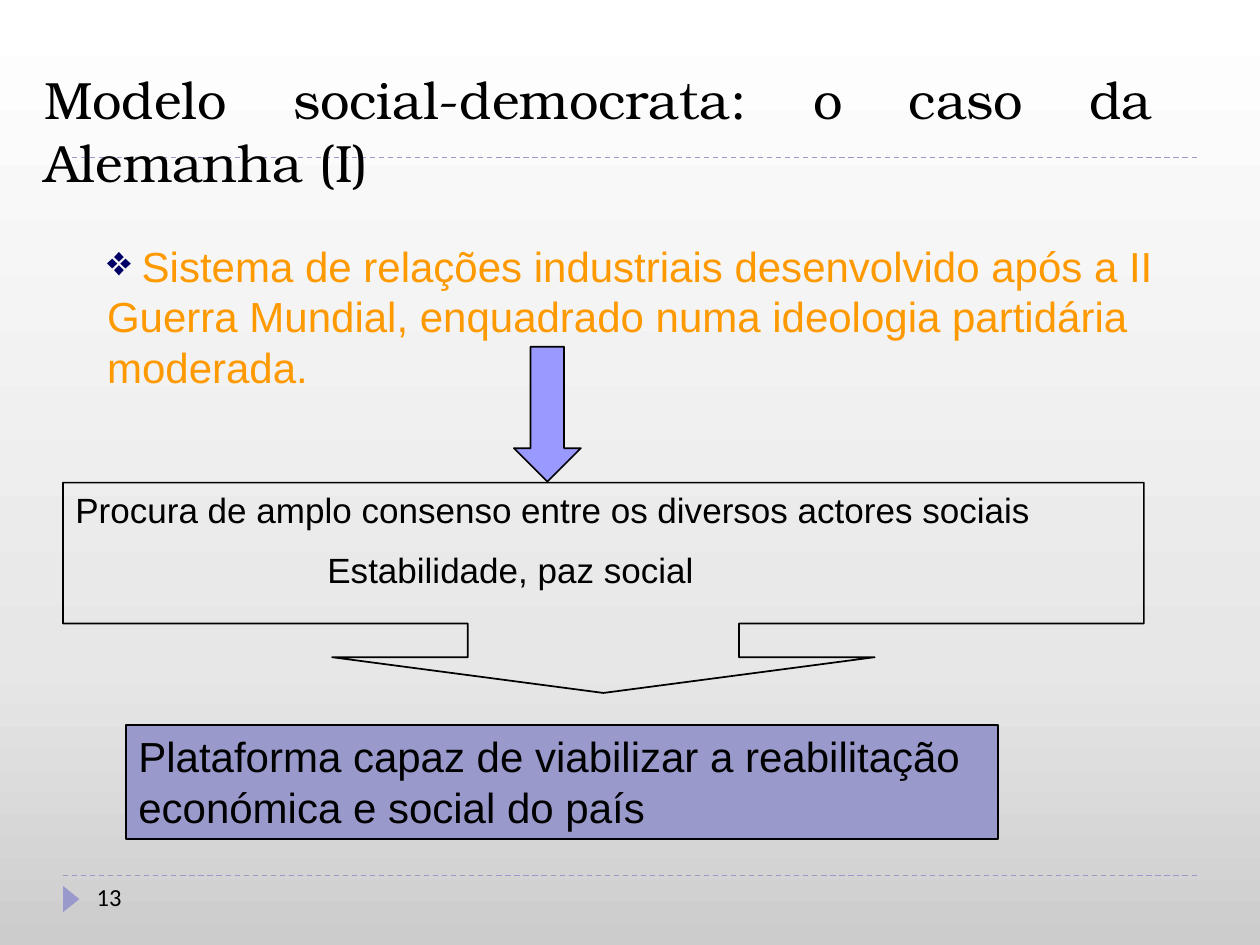
"""Build the slide on the social-democratic model in Germany."""
from copy import deepcopy
from dataclasses import dataclass

from lxml.etree import SubElement
from pptx import Presentation
from pptx.dml.color import RGBColor
from pptx.enum.dml import MSO_LINE
from pptx.enum.shapes import MSO_CONNECTOR, MSO_SHAPE
from pptx.enum.text import MSO_ANCHOR, MSO_AUTO_SIZE, PP_ALIGN
from pptx.oxml.ns import qn
from pptx.util import Cm, Pt


@dataclass
class Box:
    left: float
    top: float
    width: float
    height: float

    def place(self) -> list:
        return [Cm(n) for n in (self.left, self.top, self.width, self.height)]


@dataclass
class Run:
    text: str
    size: int
    font: str = "Arial"
    color: str = "000000"


@dataclass
class Para:
    runs: list[Run]
    indent: float = 0
    before: int = 0
    mark: str = ""
    tint: str = ""


@dataclass
class Form:
    kind: MSO_SHAPE
    box: Box
    fill: str = ""
    edge: str = ""
    adjust: tuple = ()
    turn: int = 0


def paint(color, code: str) -> None:
    color.rgb = RGBColor.from_string(code)


def write(frame, paras: list[Para], align=PP_ALIGN.LEFT, anchor=MSO_ANCHOR.TOP) -> None:
    frame.word_wrap = True
    frame.auto_size = MSO_AUTO_SIZE.NONE
    frame.vertical_anchor = anchor
    for i, para in enumerate(paras):
        line = frame.add_paragraph() if i else frame.paragraphs[0]
        line.alignment = align
        props = line._p.get_or_add_pPr()
        if para.before:
            line.space_before = Pt(para.before)
        if para.indent:
            props.set("marL", str(Cm(para.indent)))
        if para.mark:
            tint = SubElement(props, qn("a:buClr"))
            SubElement(tint, qn("a:srgbClr"), val=para.tint)
            SubElement(props, qn("a:buChar"), char=para.mark)
        for item in para.runs:
            run = line.add_run()
            run.text = item.text
            run.font.size = Pt(item.size)
            run.font.name = item.font
            paint(run.font.color, item.color)


def add_text(slide, box: Box, paras: list[Para]) -> None:
    write(slide.shapes.add_textbox(*box.place()).text_frame, paras)


def add_form(slide, form: Form):
    shape = slide.shapes.add_shape(form.kind, *form.box.place())
    shape.shadow.inherit = False
    shape.rotation = form.turn
    for i, value in enumerate(form.adjust):
        shape.adjustments[i] = value
    if form.fill:
        shape.fill.solid()
        paint(shape.fill.fore_color, form.fill)
    else:
        shape.fill.background()
    if form.edge:
        paint(shape.line.color, form.edge)
        shape.line.width = Pt(1)
    else:
        shape.line.fill.background()
    return shape


def add_rule(slide, top: float) -> None:
    rule = slide.shapes.add_connector(
        MSO_CONNECTOR.STRAIGHT, Cm(1.27), Cm(top), Cm(24.13), Cm(top))
    paint(rule.line.color, "9999CC")
    rule.line.width = Pt(0.75)
    rule.line.dash_style = MSO_LINE.DASH
    SubElement(rule._element.spPr, qn("a:effectLst"))


def shade(slide, stops: list[tuple[float, str]]) -> None:
    fill = slide.background.fill
    fill.gradient()
    fill.gradient_angle = 90
    group = next(slide._element.iter(qn("a:gsLst")))
    while len(group) < len(stops):
        group.append(deepcopy(group[-1]))
    for stop, (place, code) in zip(fill.gradient_stops, stops):
        stop.position = place
        paint(stop.color, code)


def main() -> None:
    deck = Presentation()
    deck.slide_width, deck.slide_height = Cm(25.4), Cm(19.05)
    slide = deck.slides.add_slide(deck.slide_layouts[5])
    shade(slide, [(0, "CCCCCC"), (0.3, "E7E7E7"), (1, "FFFFFF")])

    for top in (17.65, 3.18):
        add_rule(slide, top)
    add_form(slide, Form(MSO_SHAPE.ISOSCELES_TRIANGLE,
                         Box(1.17, 17.96, 0.53, 0.33), "9999CC", turn=90))

    title = slide.shapes.title
    title.left, title.top, title.width, title.height = Box(0.64, 0.64, 22.86, 3.38).place()
    write(title.text_frame,
          [Para([Run("Modelo social-democrata: o caso da Alemanha (I)", 30, "TeX Gyre Bonum")])],
          PP_ALIGN.JUSTIFY, MSO_ANCHOR.BOTTOM)
    slide.shapes._spTree.append(title._element)

    add_text(slide, Box(1.7, 17.65, 5.51, 1.02), [Para([Run("13", 14, "Calibri")])])
    add_text(slide, Box(1.91, 4.72, 23.49, 4.83), [Para([
        Run(" ", 24, "Times New Roman", "000066"),
        Run("Sistema de relações industriais desenvolvido após a II Guerra Mundial, "
            "enquadrado numa ideologia partidária moderada.", 24, color="FF9900"),
    ], mark="❖", tint="000066")])
    add_form(slide, Form(MSO_SHAPE.DOWN_ARROW, Box(10.36, 6.99, 1.35, 2.72),
                         "9999FF", "000000", (0.5, 0.5)))
    add_text(slide, Box(1.27, 9.73, 21.59, 3.63), [
        Para([Run("Procura de amplo consenso entre os diversos actores sociais", 20)]),
        Para([Run("Estabilidade, paz social", 20)], indent=5.08, before=10),
    ])
    add_form(slide, Form(MSO_SHAPE.DOWN_ARROW_CALLOUT, Box(1.27, 9.73, 21.79, 4.24),
                         edge="000000", adjust=(1.29, 1.29, 0.17, 0.67)))
    goal = add_form(slide, Form(MSO_SHAPE.RECTANGLE, Box(2.54, 14.61, 17.58, 2.31),
                                "9999CC", "000000"))
    write(goal.text_frame, [Para([Run(
        "Plataforma capaz de viabilizar a reabilitação económica e social do país", 24)])])
    deck.save("out.pptx")


if __name__ == "__main__":
    main()
